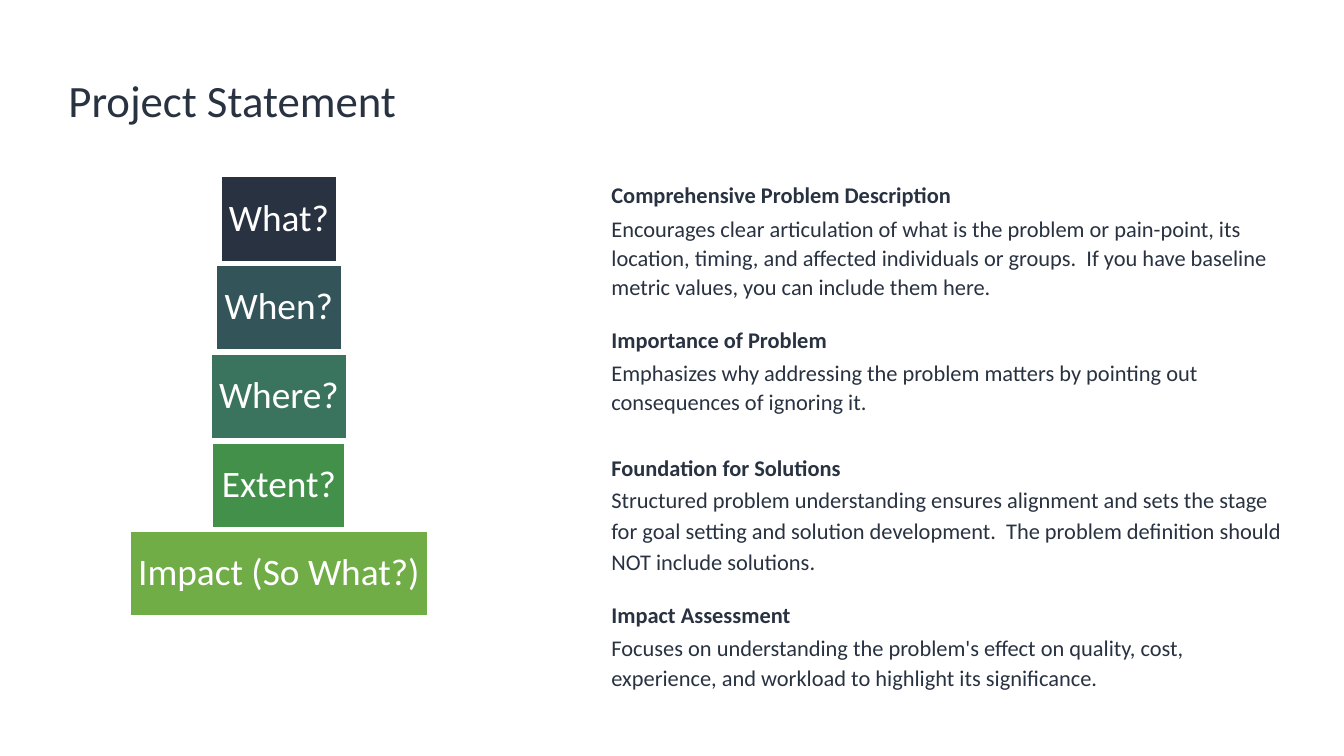
from pptx import Presentation
from pptx.dml.color import RGBColor
from pptx.enum.shapes import MSO_SHAPE
from pptx.enum.text import MSO_ANCHOR, PP_ALIGN
from pptx.util import Inches, Pt

RECT = MSO_SHAPE.RECTANGLE
MIDDLE = MSO_ANCHOR.MIDDLE
CENTER = PP_ALIGN.CENTER

NAVY = RGBColor(0x29, 0x32, 0x41)
SLATE = RGBColor(0x33, 0x55, 0x5A)
TEAL = RGBColor(0x3B, 0x74, 0x5E)
GREEN = RGBColor(0x42, 0x90, 0x4A)
LIME = RGBColor(0x70, 0xAD, 0x47)
WHITE = RGBColor(0xFF, 0xFF, 0xFF)

# Label, width, fill
TIERS = [
    ("What?", 1.72, NAVY),
    ("When?", 1.87, SLATE),
    ("Where?", 2.02, TEAL),
    ("Extent?", 1.97, GREEN),
    ("Impact (So What?)", 4.43, LIME),
]
AXIS, TOP, PITCH, HEIGHT = 4.15, 2.63, 1.32, 1.26

# Heading, body, line spacing, space before heading, space before body
TOPICS = [
    ("Comprehensive Problem Description",
     "Encourages clear articulation of what is the problem or pain-point, its "
     "location, timing, and affected individuals or groups.  If you have "
     "baseline metric values, you can include them here.", 1.08, 0, 5),
    ("Importance of Problem",
     "Emphasizes why addressing the problem matters by pointing out "
     "consequences of ignoring it.", 1.08, 25, 5),
    ("Foundation for Solutions",
     "Structured problem understanding ensures alignment and sets the stage "
     "for goal setting and solution development.  The problem definition "
     "should NOT include solutions.", 1.17, 37, 0),
    ("Impact Assessment",
     "Focuses on understanding the problem's effect on quality, cost, "
     "experience, and workload to highlight its significance.", 1.08, 25, 5),
]


class Deck:
    font = "Calibri"

    def __init__(self, slide):
        self.slide = slide

    def style(self, par, text, size, color, bold=False, line=0.9, before=0):
        par.text = text
        par.line_spacing = line
        par.space_before = Pt(before)
        par.font.name = self.font
        par.font.size = Pt(size)
        par.font.bold = bold
        par.font.color.rgb = color

    def text(self, left, top, width, height):
        box = self.slide.shapes.add_textbox(
            Inches(left), Inches(top), Inches(width), Inches(height))
        box.text_frame.word_wrap = True
        return box.text_frame

    def title(self, text):
        frame = self.text(0.92, 1.12, 17.25, 1.9)
        self.style(frame.paragraphs[0], text, 48, NAVY)

    def tier(self, label, top, width, fill):
        box = self.slide.shapes.add_shape(
            RECT, Inches(AXIS - width / 2), Inches(top),
            Inches(width), Inches(HEIGHT))
        box.shadow.inherit = False
        box.fill.solid()
        box.fill.fore_color.rgb = fill
        box.line.color.rgb = WHITE
        box.line.width = Pt(1.5)
        frame = box.text_frame
        frame.word_wrap = False
        frame.vertical_anchor = MIDDLE
        frame.margin_left = frame.margin_right = Inches(0.11)
        frame.margin_top = frame.margin_bottom = Inches(0.11)
        par = frame.paragraphs[0]
        par.alignment = CENTER
        self.style(par, label, 40, WHITE)

    def topics(self, items):
        frame = self.text(9, 2.62, 10.33, 8.08)
        par = frame.paragraphs[0]
        for i, (head, body, line, above, gap) in enumerate(items):
            if i:
                par = frame.add_paragraph()
            self.style(par, head, 24, NAVY, True, line, above)
            self.style(frame.add_paragraph(), body, 24, NAVY, False, line, gap)


def main():
    prs = Presentation()
    prs.slide_width = Inches(20)
    prs.slide_height = Inches(11.25)
    deck = Deck(prs.slides.add_slide(prs.slide_layouts[6]))

    # Title
    deck.title("Project Statement")

    # Explanations on the right
    deck.topics(TOPICS)

    # Stack of questions on the left
    for i, (label, width, fill) in enumerate(TIERS):
        deck.tier(label, TOP + i * PITCH, width, fill)

    prs.save("out.pptx")


if __name__ == "__main__":
    main()
